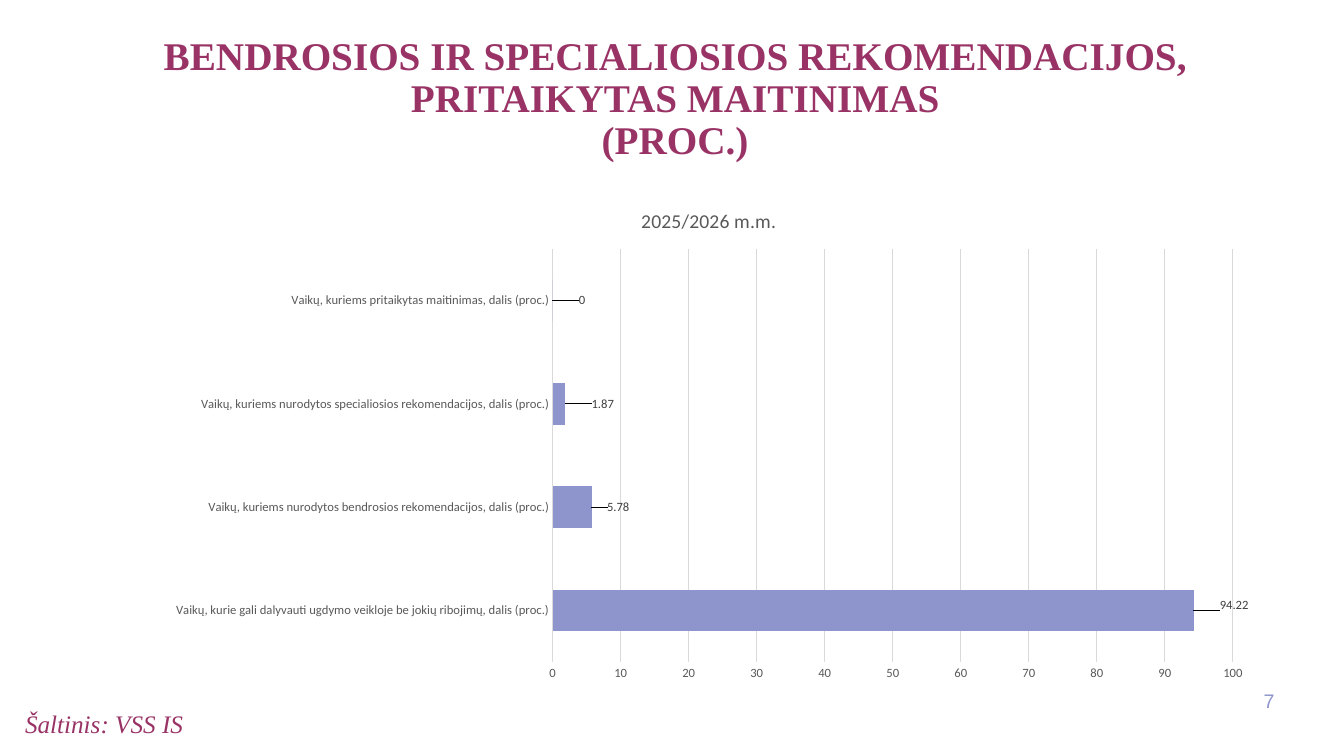
from lxml import etree
from pptx import Presentation
from pptx.chart.data import CategoryChartData
from pptx.dml.color import RGBColor
from pptx.enum.chart import XL_CHART_TYPE, XL_LABEL_POSITION, XL_TICK_MARK
from pptx.enum.text import MSO_ANCHOR, PP_ALIGN
from pptx.oxml import parse_xml
from pptx.oxml.ns import nsdecls
from pptx.util import Inches, Pt

LEFT, CENTER, RIGHT = PP_ALIGN.LEFT, PP_ALIGN.CENTER, PP_ALIGN.RIGHT
TOP = MSO_ANCHOR.TOP
BAR_CLUSTERED = XL_CHART_TYPE.BAR_CLUSTERED
OUTSIDE_END = XL_LABEL_POSITION.OUTSIDE_END
NO_TICK = XL_TICK_MARK.NONE

# Content
TITLE = "BENDROSIOS IR SPECIALIOSIOS REKOMENDACIJOS,\nPRITAIKYTAS MAITINIMAS\n(PROC.)"
SOURCE = "Šaltinis: VSS IS"
PAGE = "7"
YEAR = "2025/2026 m.m."
# Category, value, label shift (x, y) as a share of the chart size
SHARES = [
    ("Vaikų, kurie gali dalyvauti ugdymo veikloje be jokių ribojimų, dalis (proc.)",
     94.22, (0.02, -0.01)),
    ("Vaikų, kuriems nurodytos bendrosios rekomendacijos, dalis (proc.)",
     5.78, (0.01, 0)),
    ("Vaikų, kuriems nurodytos specialiosios rekomendacijos, dalis (proc.)",
     1.87, (0.02, 0)),
    ("Vaikų, kuriems pritaikytas maitinimas, dalis (proc.)",
     0, (0.02, 0)),
]
PLOT = {"x": 0.36, "y": 0.12, "w": 0.61, "h": 0.82}

THEME = {
    "heading_font": "Times New Roman", "page_font": "Arial", "chart_font": "Calibri",
    "plum": "993366", "page": "8E96CD", "bar": "8D95CC", "axis": "595959",
    "label": "404040", "grid": "D9D9D9", "black": "000000",
    "title_size": 28, "source_size": 18, "page_size": 14,
    "chart_title_size": 14, "chart_size": 10, "small_size": 9,
}


def set_font(font, size, color, name, bold=False, italic=False):
    font.size = Pt(size)
    font.name = name
    font.bold = bold
    font.italic = italic
    font.color.rgb = RGBColor.from_string(color)


def add_text(slide, text, box, align=LEFT, spacing=None, **fmt):
    tf = slide.shapes.add_textbox(*map(Inches, box)).text_frame
    tf.word_wrap = True
    tf.vertical_anchor = TOP
    p = tf.paragraphs[0]
    p.alignment = align
    p.line_spacing = spacing
    for i, line in enumerate(text.split("\n")):
        if i:
            p.add_line_break()
        r = p.add_run()
        r.text = line
        set_font(r.font, **fmt)


def manual_layout(**values):
    layout = parse_xml(f"<c:layout {nsdecls('c')}><c:manualLayout/></c:layout>")
    for tag, value in values.items():
        etree.SubElement(layout[0], f"{{{layout.nsmap['c']}}}{tag}", val=str(value))
    return layout


def replace_layout(parent, layout, index):
    for old in parent.findall(layout.tag):
        parent.remove(old)
    parent.insert(index, layout)


def add_share_chart(slide, box):
    t = THEME
    small = {"size": t["small_size"], "name": t["chart_font"]}
    data = CategoryChartData()
    data.categories = [name for name, _, _ in SHARES]
    data.add_series(YEAR, [value for _, value, _ in SHARES])
    chart = slide.shapes.add_chart(BAR_CLUSTERED, *map(Inches, box), data).chart
    set_font(chart.font, t["chart_size"], t["black"], t["chart_font"])
    chart.has_legend = False

    # Chart title
    chart.has_title = True
    p = chart.chart_title.text_frame.paragraphs[0]
    r = p.add_run()
    r.text = YEAR
    set_font(r.font, t["chart_title_size"], t["axis"], t["chart_font"])
    chart.chart_title.include_in_layout = False

    # Axes
    for axis in (chart.category_axis, chart.value_axis):
        axis.major_tick_mark = axis.minor_tick_mark = NO_TICK
        axis.format.line.fill.background()
        set_font(axis.tick_labels.font, color=t["axis"], **small)
    chart.category_axis.has_major_gridlines = False
    values = chart.value_axis
    values.minimum_scale, values.maximum_scale, values.major_unit = 0, 100, 10
    values.has_major_gridlines = True
    grid = values.major_gridlines.format.line
    grid.color.rgb = RGBColor.from_string(t["grid"])
    grid.width = Pt(0.75)

    # Bars and their labels
    plot = chart.plots[0]
    plot.gap_width = 150
    plot.vary_by_categories = False
    series = plot.series[0]
    series.format.fill.solid()
    series.format.fill.fore_color.rgb = RGBColor.from_string(t["bar"])
    labels = series.data_labels
    labels.show_value = True
    labels.position = OUTSIDE_END
    set_font(labels.font, color=t["label"], **small)
    for i, (_, _, (dx, dy)) in enumerate(SHARES):
        label = series.points[i].data_label
        set_font(label.font, color=t["label"], **small)
        label.position = OUTSIDE_END
        item = labels._element.findall("c:dLbl", labels._element.nsmap)[i]
        replace_layout(item, manual_layout(x=dx, y=dy), 1)

    # Plot area
    area = plot._element.getparent()
    replace_layout(area, manual_layout(layoutTarget="inner", xMode="edge",
                                       yMode="edge", **PLOT), 0)


def main():
    t = THEME
    prs = Presentation()
    prs.slide_width, prs.slide_height = Inches(13.33), Inches(7.5)
    s = prs.slides.add_slide(prs.slide_layouts[6])

    # Heading, source and page number
    heading = {"color": t["plum"], "name": t["heading_font"]}
    add_text(s, TITLE, (0.15, 0.31, 13.09, 1.56), align=CENTER, spacing=0.9,
             size=t["title_size"], bold=True, **heading)
    add_text(s, SOURCE, (0.15, 6.98, 6.3, 0.38),
             size=t["source_size"], italic=True, **heading)
    add_text(s, PAGE, (12.22, 6.79, 0.52, 0.4), align=RIGHT,
             size=t["page_size"], color=t["page"], name=t["page_font"])

    # Chart
    add_share_chart(s, (1.5, 1.87, 11.06, 5))
    prs.save("out.pptx")


if __name__ == "__main__":
    main()
